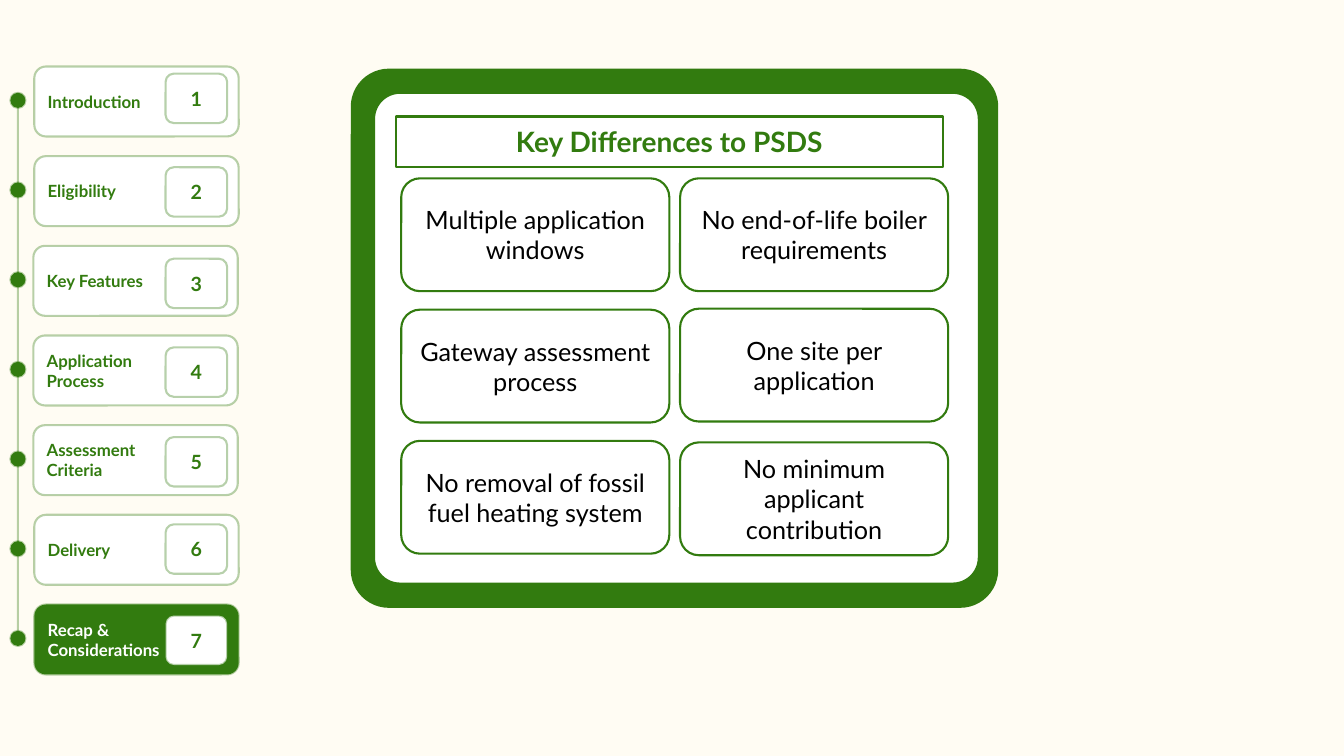
from dataclasses import dataclass
from typing import Any

import lxml.etree
import pptx
import pptx.dml.color
import pptx.enum.shapes
import pptx.enum.text
import pptx.oxml
import pptx.oxml.ns
import pptx.util

Pt = pptx.util.Pt
Shape = pptx.enum.shapes.MSO_SHAPE
Align = pptx.enum.text.PP_ALIGN
qn = pptx.oxml.ns.qn

GREEN, WHITE, BLACK, CREAM = "327B0F", "FFFFFF", "000000", "FFFCF3"
FONT = "Lato"
FADED = 35  # opacity of the navigation outlines, percent

NAV_TOP, NAV_PITCH = 47.5, 64.05
DOT_TOP, DOT_SIZE, DOT_LEFT = 66.3, 10.8, 7.4
CARD_W, CARD_H = 191.5, 80.6


@dataclass(frozen=True)
class Box:
    left: float
    top: float
    width: float
    height: float


@dataclass(frozen=True)
class Section:
    label: str
    left: float
    badge_offset: float
    current: bool = False


@dataclass(frozen=True)
class Card:
    text: str
    left: float
    top: float


SECTIONS = [
    Section("Introduction", 24.5, 5.1),
    Section("Eligibility", 24.5, 7.9),
    Section("Key Features", 23.8, 9.2),
    Section("Application\nProcess", 23.8, 8.5),
    Section("Assessment\nCriteria", 23.8, 8.5),
    Section("Delivery", 24.5, 6.8),
    Section("Recap &\nConsiderations", 24.5, 7.9, current=True),
]

LEFT_COLUMN, RIGHT_COLUMN = 286.6, 485.8
CARDS = [
    Card("Multiple application windows", LEFT_COLUMN, 127.4),
    Card("No end-of-life boiler requirements", RIGHT_COLUMN, 127.4),
    Card("Gateway assessment process", LEFT_COLUMN, 221.2),
    Card("One site per application", RIGHT_COLUMN, 220.5),
    Card("No removal of fossil fuel heating system", LEFT_COLUMN, 314.9),
    Card("No minimum applicant contribution", RIGHT_COLUMN, 316),
]


def rgb(color: str) -> pptx.dml.color.RGBColor:
    return pptx.dml.color.RGBColor.from_string(color)


def style_line(line: Any, opacity: int = 100) -> None:
    line.color.rgb = rgb(GREEN)
    line.width = Pt(1.5)
    if opacity < 100:
        clr = line.fill._xPr.find(".//" + qn("a:srgbClr"))
        lxml.etree.SubElement(clr, qn("a:alpha")).set("val", str(opacity * 1000))


def fill_and_outline(sp: Any, fill: str, opacity: int = 100) -> None:
    sp.fill.solid()
    sp.fill.fore_color.rgb = rgb(fill)
    style_line(sp.line, opacity)


def add_box(s: Any, kind: Any, box: Box, fill: str, opacity: int = 100) -> Any:
    sp = s.shapes.add_shape(kind, Pt(box.left), Pt(box.top), Pt(box.width), Pt(box.height))
    sp.shadow.inherit = False
    fill_and_outline(sp, fill, opacity)
    return sp


def write(sp: Any, text: str, size: float, color: str, bold: bool = False,
          align: Any = Align.CENTER) -> None:
    tf = sp.text_frame
    tf.text = text
    tf.word_wrap = True
    tf.auto_size = pptx.enum.text.MSO_AUTO_SIZE.NONE
    tf.vertical_anchor = pptx.enum.text.MSO_ANCHOR.MIDDLE
    for p in tf.paragraphs:
        p.alignment = align
        for r in p.runs:
            r.font.name = FONT
            r.font.size = Pt(size)
            r.font.bold = bold
            r.font.color.rgb = rgb(color)


def add_navigation(s: Any) -> None:
    for i, section in enumerate(SECTIONS):
        top = NAV_TOP + i * NAV_PITCH
        sp = add_box(s, Shape.ROUNDED_RECTANGLE, Box(section.left, top, 146, 50),
                     GREEN if section.current else WHITE, FADED)
        write(sp, section.label, 12, WHITE if section.current else GREEN, True, Align.LEFT)
        badge = add_box(s, Shape.ROUNDED_RECTANGLE,
                        Box(118.3, top + section.badge_offset, 44, 35.3), WHITE, FADED)
        write(badge, str(i + 1), 14, GREEN, True)

    x = DOT_LEFT + DOT_SIZE / 2
    track = s.shapes.add_connector(pptx.enum.shapes.MSO_CONNECTOR.STRAIGHT,
                                   Pt(x), Pt(66.3), Pt(x), Pt(456.5))
    style_line(track.line, FADED)
    lxml.etree.SubElement(track._element.spPr, qn("a:effectLst"))
    for i in range(len(SECTIONS)):
        dot = Box(DOT_LEFT, DOT_TOP + i * NAV_PITCH, DOT_SIZE, DOT_SIZE)
        add_box(s, Shape.OVAL, dot, GREEN, FADED)


def add_panel(s: Any) -> None:
    frame = add_box(s, Shape.ROUNDED_RECTANGLE, Box(251.3, 49.8, 461, 383.6), GREEN)
    frame.adjustments[0] = 0.069
    inside = add_box(s, Shape.ROUNDED_RECTANGLE, Box(267.2, 66.3, 432, 350.6), WHITE)
    inside.adjustments[0] = 0.053
    for card in CARDS:
        sp = add_box(s, Shape.ROUNDED_RECTANGLE,
                     Box(card.left, card.top, CARD_W, CARD_H), WHITE)
        write(sp, card.text, 18, BLACK)


def format_title(s: Any) -> None:
    """Turn the title placeholder into the rounded heading above the cards."""
    sp = s.shapes.title
    sp.left, sp.top, sp.width, sp.height = Pt(282.8), Pt(83.2), Pt(390.5), Pt(35.8)
    geom = lxml.etree.SubElement(sp._element.spPr, qn("a:prstGeom"))
    geom.set("prst", "roundRect")
    lxml.etree.SubElement(geom, qn("a:avLst"))
    fill_and_outline(sp, WHITE)
    write(sp, "Key Differences to PSDS", 20, GREEN, True)
    s.shapes._spTree.append(sp._element)  # bring to front


def main() -> None:
    prs = pptx.Presentation()
    prs.slide_width, prs.slide_height = Pt(960), Pt(540)
    s = prs.slides.add_slide(prs.slide_layouts.get_by_name("Title Only"))
    s.background.fill.solid()
    s.background.fill.fore_color.rgb = rgb(CREAM)
    add_navigation(s)
    add_panel(s)
    format_title(s)
    prs.save("out.pptx")


if __name__ == "__main__":
    main()
